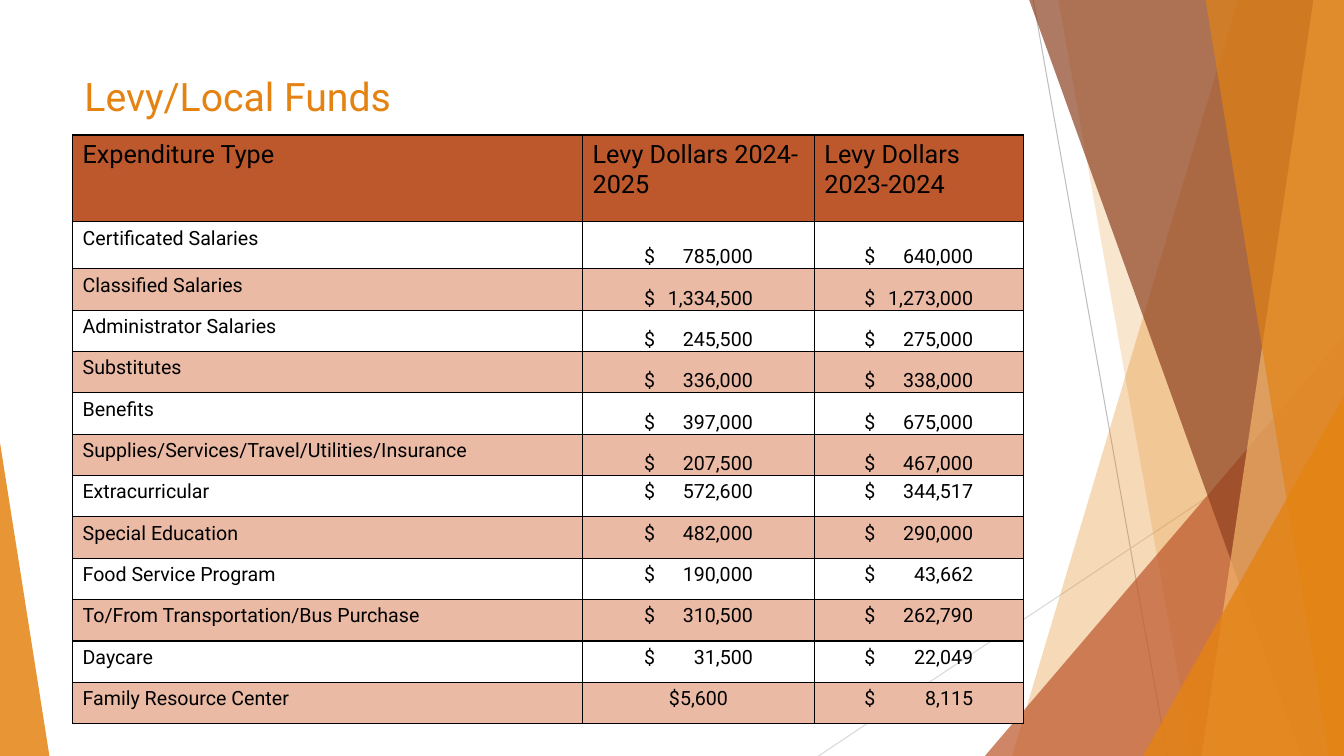
"""Build the levy and local funds slide with its table and angular backdrop."""
import lxml.etree
import pptx
import pptx.dml.color
import pptx.enum.shapes
import pptx.enum.text
import pptx.oxml.ns
import pptx.util

TOP = pptx.enum.text.MSO_ANCHOR.TOP
LOW = pptx.enum.text.MSO_ANCHOR.BOTTOM
LEFT = pptx.enum.text.PP_ALIGN.LEFT
MID = pptx.enum.text.PP_ALIGN.CENTER
SHAPES = pptx.enum.shapes.MSO_SHAPE
qn = pptx.oxml.ns.qn

THEME = {
    "orange": "E48312", "rust": "BD582C", "brown": "8E4221", "peach": "F3B56C",
    "band": "EABAA5", "ink": "000000", "grey": "BFBFBF", "pale": "D9D9D9",
    "title": {"name": "Roboto", "size": pptx.util.Pt(28)},
    "head": {"name": "Roboto", "size": pptx.util.Pt(18)},
    "body": {"name": "Roboto", "size": pptx.util.Pt(14)},
    "rule": pptx.util.Pt(0.75), "edge": pptx.util.Pt(1),
}

deck = pptx.Presentation()
deck.slide_width = pptx.util.Inches(13.33)
deck.slide_height = pptx.util.Inches(7.5)
slide = deck.slides.add_slide(deck.slide_layouts[6])
wide, high = deck.slide_width / 100, deck.slide_height / 100


def tint(color, name):
    """Give a color format one of the theme colors."""
    color.rgb = pptx.dml.color.RGBColor.from_string(THEME[name])


def write(frame, text, look, name):
    """Put one styled line into a text frame and return its paragraph."""
    line = frame.paragraphs[0]
    run = line.add_run()
    run.text = text
    for key, value in THEME[look].items():
        setattr(run.font, key, value)
    tint(run.font.color, name)
    return line


for x1, y1, x2, y2, shade in [(76.88, 0, 86.85, 100, "grey"), (100, 53.73, 60.9, 100, "pale")]:
    ray = slide.shapes.add_connector(
        pptx.enum.shapes.MSO_CONNECTOR.STRAIGHT,
        int(x1 * wide), int(y1 * high), int(x2 * wide), int(y2 * high))
    tint(ray.line.color, shade)
    ray.line.width = THEME["rule"]
    lxml.etree.SubElement(ray._element.spPr, qn("a:effectLst"))

# fmt: off
shards = [
    ("slice", 92.1, 75.3, "orange", 30),
    ("slice", 78.75, 88.73, "orange", 20),
    ("wedge", 73.28, 44.4, "rust", 72),
    ("slice", 76.58, 96.83, "brown", 70),
    ("slice", 97.73, 89.4, "peach", 70),
    ("slice", 89.7, 98.85, "orange", 65),
    ("wedge", 85.05, 52.4, "orange", 80),
    ("wedge", 3.68, 58.53, "orange", 85),
]
# fmt: on
for kind, first, second, shade, share in shards:
    if kind == "slice":
        draft = slide.shapes.build_freeform(int(first * wide), 0)
        draft.add_line_segments(
            [(int(x * wide), int(y * high)) for x, y in [(100, 0), (100, 100), (second, 100)]])
        shard = draft.convert_to_shape()
    else:
        right = first > 50
        start, span = (first, 100 - first) if right else (0, first)
        shard = slide.shapes.add_shape(
            SHAPES.ISOSCELES_TRIANGLE, int(start * wide), int(second * high),
            int(span * wide), int((100 - second) * high))
        shard.adjustments[0] = 1 if right else 0
    shard.shadow.inherit = False
    shard.line.fill.background()
    shard.fill.solid()
    tint(shard.fill.fore_color, shade)
    color = shard._element.spPr.find(qn("a:solidFill"))[0]
    lxml.etree.SubElement(color, qn("a:alpha"), val=str(share * 1000))

title = slide.shapes.add_textbox(
    int(5.55 * wide), int(8.93 * high), int(70.5 * wide), int(7.47 * high))
title.text_frame.word_wrap = True
write(title.text_frame, "Levy/Local Funds", "title", "orange")

funds = [
    ("Expenditure Type", "Levy Dollars 2024-2025", "Levy Dollars 2023-2024"),
    ("Certificated Salaries", "$\t785,000", "$\t640,000"),
    ("Classified Salaries", "$\t1,334,500", "$\t1,273,000"),
    ("Administrator Salaries", "$\t245,500", "$\t275,000"),
    ("Substitutes", "$\t336,000", "$\t338,000"),
    ("Benefits", "$\t397,000", "$\t675,000"),
    ("Supplies/Services/Travel/Utilities/Insurance", "$\t207,500", "$\t467,000"),
    ("Extracurricular", "$\t572,600", "$\t344,517"),
    ("Special Education", "$\t482,000", "$\t290,000"),
    ("Food Service Program", "$\t190,000", "$\t43,662"),
    ("To/From Transportation/Bus Purchase", "$\t310,500", "$\t262,790"),
    ("Daycare", "$\t31,500", "$\t22,049"),
    ("Family Resource Center", "$5,600", "$\t8,115"),
]
widths = [int(share * wide) for share in (37.95, 17.25, 15.53)]
heights = [int(share * high) for share in [11.47, 6.22] + [5.47] * 11]
grid = slide.shapes.add_table(
    len(funds), len(widths), int(5.4 * wide), int(17.87 * high), sum(widths), sum(heights)).table
grid.first_row = grid.horz_banding = False
for column, width in zip(grid.columns, widths):
    column.width = width
for row, height in zip(grid.rows, heights):
    row.height = height

pad, inset = int(0.75 * wide), int(0.67 * high)
amount = int(8.1 * wide)
for r, record in enumerate(funds):
    for c, text in enumerate(record):
        cell = grid.cell(r, c)
        tabbed = "\t" in text
        low = c > 0 and 1 <= r <= 6
        form = {
            "margin_left": (widths[c] - amount) // 2 if tabbed else pad,
            "margin_right": pad,
            "margin_top": 0 if low else inset,
            "margin_bottom": 0 if low else inset,
            "vertical_anchor": LOW if low else TOP,
        }
        for key, value in form.items():
            setattr(cell, key, value)
        line = write(cell.text_frame, text, "body" if r else "head", "ink")
        line.alignment = MID if r and c and not tabbed else LEFT
        if tabbed:
            stops = lxml.etree.SubElement(line._p.get_or_add_pPr(), qn("a:tabLst"))
            lxml.etree.SubElement(stops, qn("a:tab"), pos=str(amount), algn="r")
        if r % 2:
            cell.fill.background()
        else:
            cell.fill.solid()
            tint(cell.fill.fore_color, "band" if r else "rust")
        props = cell._tc.get_or_add_tcPr()
        for spot, side in enumerate(["a:lnL", "a:lnR", "a:lnT", "a:lnB"]):
            edge = lxml.etree.Element(qn(side), w=str(THEME["edge"]))
            paint = lxml.etree.SubElement(edge, qn("a:solidFill"))
            lxml.etree.SubElement(paint, qn("a:srgbClr"), val=THEME["ink"])
            props.insert(spot, edge)

deck.save("out.pptx")
